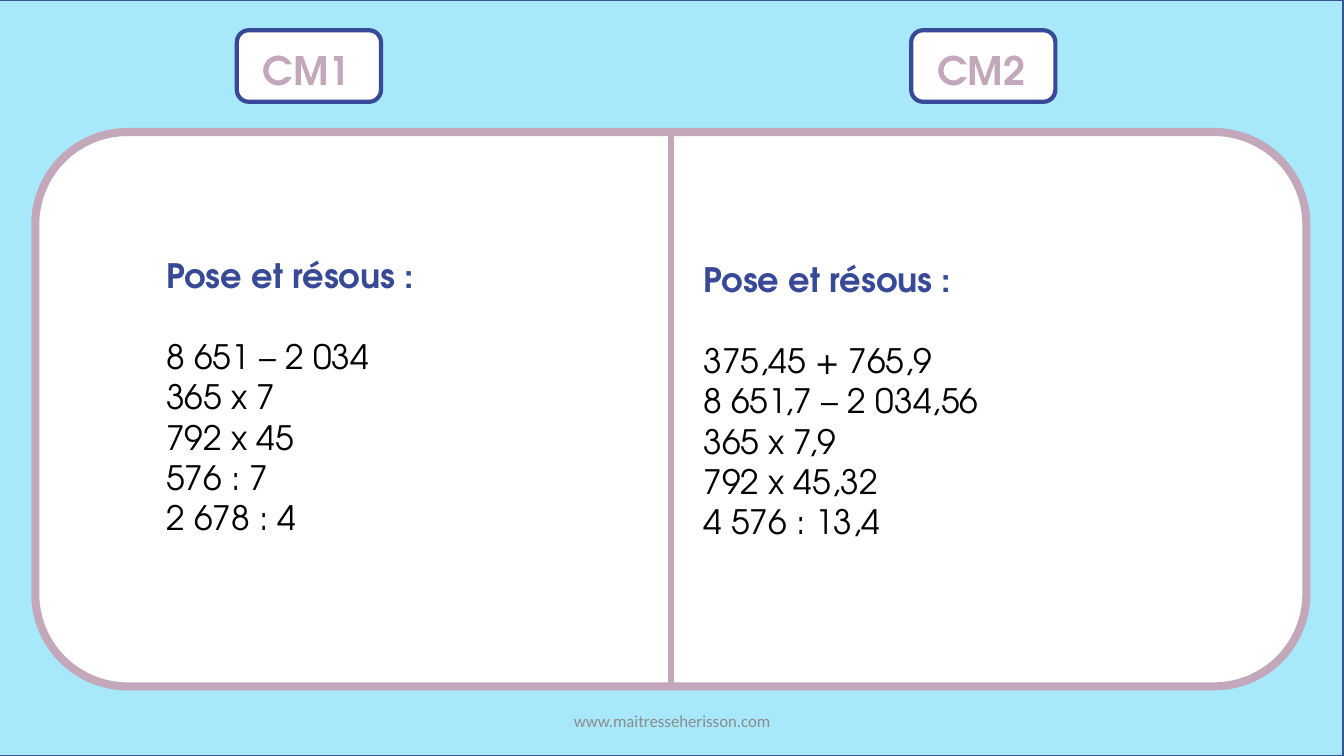
import pptx
import pptx.dml.color
import pptx.enum.shapes
import pptx.enum.text
import pptx.oxml.ns
import pptx.util
import lxml.etree

RGBColor = pptx.dml.color.RGBColor
SKY = RGBColor(0xA7, 0xE8, 0xFB)
EDGE = RGBColor(0x32, 0x54, 0x91)
MAUVE = RGBColor(0xC3, 0xA7, 0xBA)
NAVY = RGBColor(0x37, 0x49, 0x97)
GREY = RGBColor(0x8C, 0x8C, 0x8C)
WHITE = RGBColor(0xFF, 0xFF, 0xFF)
BLACK = RGBColor(0, 0, 0)

RECTANGLE = pptx.enum.shapes.MSO_SHAPE.RECTANGLE
ROUNDED = pptx.enum.shapes.MSO_SHAPE.ROUNDED_RECTANGLE
LEFT = pptx.enum.text.PP_ALIGN.LEFT
CENTER = pptx.enum.text.PP_ALIGN.CENTER
TOP = pptx.enum.text.MSO_ANCHOR.TOP
MIDDLE = pptx.enum.text.MSO_ANCHOR.MIDDLE


def write(paragraph, text, size=24, color=BLACK, bold=False,
          font="TeX Gyre Adventor", align=LEFT, before=0):
    paragraph.alignment = align
    if before:
        paragraph.space_before = pptx.util.Pt(before)
    run = paragraph.add_run()
    run.text = text
    run.font.name = font
    run.font.size = pptx.util.Pt(size)
    run.font.bold = bold
    run.font.color.rgb = color


class Worksheet:
    """Draws exercise slides on a grid of tenth-of-an-inch columns and rows."""

    cell = pptx.util.Inches(0.1)

    def __init__(self, columns, rows):
        self.presentation = pptx.Presentation()
        self.presentation.slide_width = round(columns * self.cell)
        self.presentation.slide_height = round(rows * self.cell)
        self.slide = self.presentation.slides.add_slide(self.presentation.slide_layouts[6])

    def place(self, *cells):
        return [round(count * self.cell) for count in cells]

    def panel(self, kind, area, fill, line, width):
        shape = self.slide.shapes.add_shape(kind, *self.place(*area))
        shape.shadow.inherit = False
        shape.fill.solid()
        shape.fill.fore_color.rgb = fill
        shape.line.color.rgb = line
        shape.line.width = pptx.util.Pt(width)
        return shape

    def text_box(self, area, anchor=TOP):
        frame = self.slide.shapes.add_textbox(*self.place(*area)).text_frame
        frame.word_wrap = True
        frame.vertical_anchor = anchor
        return frame

    def divider(self, panel, color, width):
        connector = self.slide.shapes.add_connector(
            pptx.enum.shapes.MSO_CONNECTOR.STRAIGHT, 0, 0, 0, 0)
        connector.begin_connect(panel, 0)
        connector.end_connect(panel, 2)
        connector.line.color.rgb = color
        connector.line.width = pptx.util.Pt(width)
        lxml.etree.SubElement(connector._element.spPr, pptx.oxml.ns.qn("a:effectLst"))

    def level_tag(self, level, column):
        self.panel(ROUNDED, (column, 3, 14.3, 7.1), WHITE, NAVY, 3)
        frame = self.text_box((column + 1.6, 4.1, 11, 5.7))
        write(frame.paragraphs[0], level, size=28, color=MAUVE, bold=True)

    def exercises(self, area, calculations):
        frame = self.text_box(area)
        write(frame.paragraphs[0], "Pose et résous :", color=NAVY, bold=True)
        for index, calculation in enumerate(calculations):
            write(frame.add_paragraph(), calculation, before=0 if index else 29)


def main():
    sheet = Worksheet(133.33, 75)
    sheet.panel(RECTANGLE, (-0.1, 0, 133.33, 75), SKY, EDGE, 1)
    board = sheet.panel(ROUNDED, (3.5, 13.1, 126.1, 55), WHITE, MAUVE, 5.75)
    sheet.divider(board, MAUVE, 4)
    sheet.level_tag("CM1", 23.5)
    sheet.level_tag("CM2", 90.4)
    sheet.exercises((15.5, 24.8, 41.1, 29.3), [
        "8 651 – 2 034", "365 x 7", "792 x 45", "576 : 7", "2 678 : 4"])
    sheet.exercises((68.8, 25.2, 57.4, 29.3), [
        "375,45 + 765,9", "8 651,7 – 2 034,56", "365 x 7,9", "792 x 45,32", "4 576 : 13,4"])
    footer = sheet.text_box((44.2, 69.5, 45, 4), anchor=MIDDLE)
    write(footer.paragraphs[0], "www.maitresseherisson.com", size=12, color=GREY,
          font="Calibri", align=CENTER)
    sheet.presentation.save("out.pptx")


if __name__ == "__main__":
    main()
